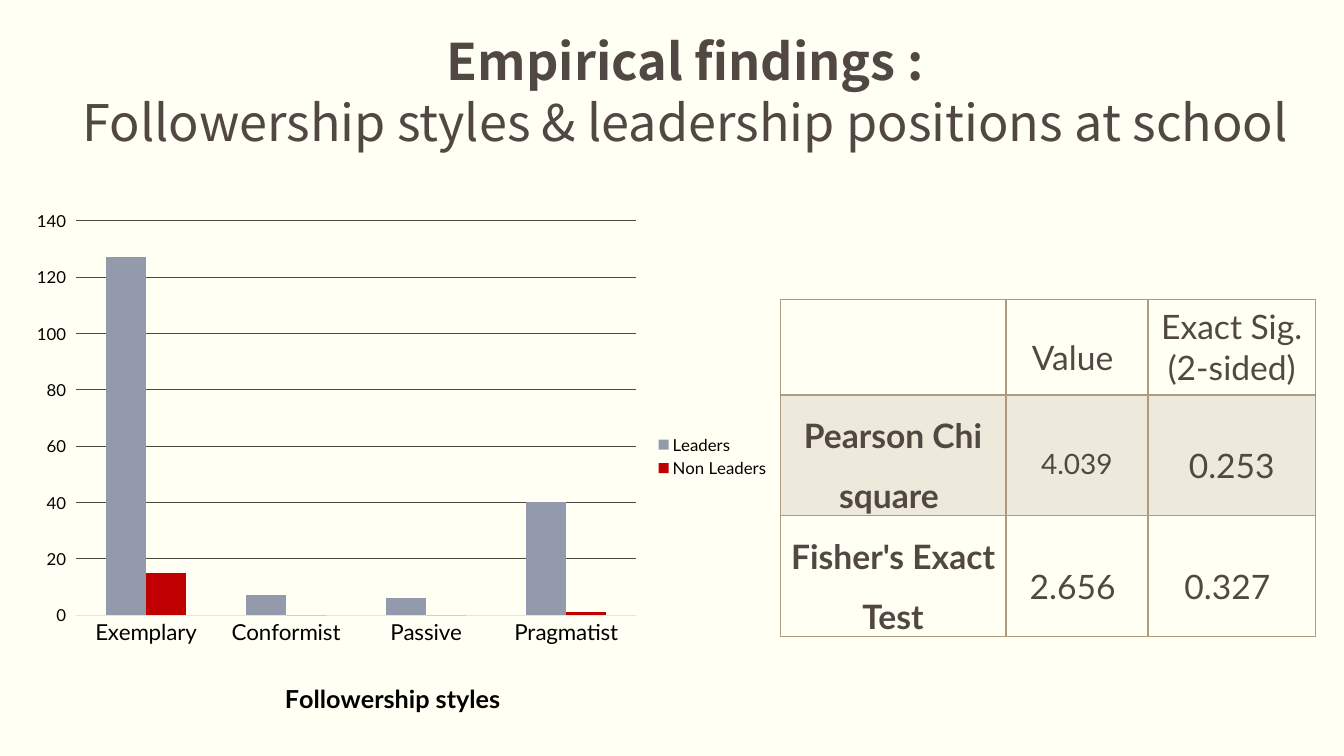
from dataclasses import dataclass
from lxml import etree
from pptx import Presentation
from pptx import util as u
from pptx.chart import data as chart_data
from pptx.dml.color import RGBColor
from pptx.enum import chart as charts, text
from pptx.oxml import ns

BACKGROUND = RGBColor(0xFF, 0xFF, 0xF3)
BROWN = RGBColor(0x51, 0x48, 0x43)
TAN = RGBColor(0xAE, 0x9A, 0x7E)
PALE = RGBColor(0xE6, 0xE3, 0xE1)
GREY_BLUE = RGBColor(0x92, 0x9A, 0xAB)
RED = RGBColor(0xC0, 0x00, 0x00)
BLACK = RGBColor(0, 0, 0)
BODY_FONT = "Lato"
TITLE_FONT = "Noto Sans CJK KR"


@dataclass
class Series:
    name: str
    values: tuple[int, ...]
    color: RGBColor


@dataclass
class Entry:
    words: str
    size: int = 24
    bold: bool = False
    spacing: float = 1.5
    anchor: text.MSO_ANCHOR = text.MSO_ANCHOR.MIDDLE


TOP = text.MSO_ANCHOR.TOP
CATEGORIES = ("Exemplary", "Conformist", "Passive", "Pragmatist")
SERIES = (
    Series("Leaders", (127, 7, 6, 40), GREY_BLUE),
    Series("Non Leaders", (15, 0, 0, 1), RED),
)
TABLE_ROWS = (
    (Entry(""), Entry("Value "), Entry("Exact Sig. (2-sided)", spacing=1.0)),
    (Entry("Pearson Chi square ", bold=True, anchor=TOP), Entry("4.039", size=20), Entry("0.253")),
    (Entry("Fisher's Exact Test", bold=True, anchor=TOP), Entry("2.656 "), Entry("0.327 ")),
)
COLUMN_WIDTHS = (5.69, 3.58, 4.22)
ROW_HEIGHTS = (2.41, 2.95, 2.95)


def format_font(font, size: float, color: RGBColor, name: str = BODY_FONT, bold: bool = False) -> None:
    font.size, font.name, font.bold = u.Pt(size), name, bold
    font.color.rgb = color


def write(paragraph, words: str, *, size: float, color: RGBColor = BROWN, name: str = BODY_FONT,
          bold: bool = False, spacing=None) -> None:
    paragraph.alignment = text.PP_ALIGN.CENTER
    paragraph.line_spacing = spacing
    run = paragraph.add_run()
    run.text = words
    format_font(run.font, size, color, name, bold)


def add_title(slide) -> None:
    shape = slide.shapes.add_textbox(u.Cm(0.91), u.Cm(0.51), u.Cm(32.72), u.Cm(3.33))
    frame = shape.text_frame
    frame.word_wrap = True
    frame.margin_top = u.Cm(0.23)
    lines = (("Empirical findings :", True),
             ("Followership styles & leadership positions at school", False))
    for index, (words, bold) in enumerate(lines):
        paragraph = frame.add_paragraph() if index else frame.paragraphs[0]
        write(paragraph, words, size=36, name=TITLE_FONT, bold=bold, spacing=u.Pt(43.5))


def set_layout(parent, index: int, **settings) -> None:
    """Place a chart part by fractions of the chart's size."""
    for old in parent.findall(ns.qn("c:layout")):
        parent.remove(old)
    layout = etree.Element(ns.qn("c:layout"))
    manual = etree.SubElement(layout, ns.qn("c:manualLayout"))
    for tag, value in settings.items():
        etree.SubElement(manual, ns.qn(f"c:{tag}")).set("val", str(value))
    parent.insert(index, layout)


def add_style_chart(slide) -> None:
    data = chart_data.CategoryChartData()
    data.categories = CATEGORIES
    for series in SERIES:
        data.add_series(series.name, series.values)
    chart = slide.shapes.add_chart(charts.XL_CHART_TYPE.COLUMN_CLUSTERED, u.Cm(0.58), u.Cm(5.05),
                                   u.Cm(19.08), u.Cm(13.13), data).chart
    format_font(chart.font, 10, BROWN)
    chart.has_title = False

    # Columns
    plot = chart.plots[0]
    plot.gap_width, plot.overlap, plot.vary_by_categories = 150, 0, False
    for drawn, series in zip(plot.series, SERIES):
        drawn.format.fill.solid()
        drawn.format.fill.fore_color.rgb = series.color

    # Axes
    category_axis, value_axis = chart.category_axis, chart.value_axis
    category_axis.major_tick_mark = charts.XL_TICK_MARK.NONE
    format_font(category_axis.tick_labels.font, 16, BLACK)
    category_axis.format.line.color.rgb = PALE
    category_axis.format.line.width = u.Pt(0.75)
    axis_title = category_axis.axis_title
    write(axis_title.text_frame.paragraphs[0], "Followership styles", size=18, color=BLACK, bold=True)
    value_axis.minimum_scale, value_axis.maximum_scale, value_axis.major_unit = 0, 140, 20
    value_axis.major_tick_mark = charts.XL_TICK_MARK.OUTSIDE
    format_font(value_axis.tick_labels.font, 12, BLACK)
    value_axis.format.line.fill.background()
    grid = value_axis.major_gridlines.format.line
    grid.color.rgb, grid.width = BROWN, u.Pt(0.75)

    # Legend and placement
    chart.has_legend = True
    chart.legend.position = charts.XL_LEGEND_POSITION.RIGHT
    chart.legend.include_in_layout = False
    format_font(chart.legend.font, 12, BLACK)
    set_layout(plot._element.getparent(), 0, layoutTarget="inner", xMode="edge", yMode="edge",
               x=0.07, y=0.04, w=0.74, h=0.77)
    set_layout(axis_title._element, 1, xMode="edge", yMode="edge", x=0.34, y=0.93)


def set_border(cell, index: int, side: str, width: float) -> None:
    line = etree.Element(ns.qn(f"a:ln{side}"), w=str(u.Pt(width)))
    fill = etree.SubElement(line, ns.qn("a:solidFill"))
    etree.SubElement(fill, ns.qn("a:srgbClr"), val=str(TAN))
    cell._tc.get_or_add_tcPr().insert(index, line)


def format_cell(cell, entry: Entry, row: int) -> None:
    cell.margin_left = cell.margin_right = u.Cm(0.18)
    cell.margin_top = cell.margin_bottom = 0
    cell.vertical_anchor = entry.anchor
    if entry.words:
        write(cell.text_frame.paragraphs[0], entry.words, size=entry.size, bold=entry.bold,
              spacing=entry.spacing)
    if row == 1:
        cell.fill.solid()
        cell.fill.fore_color.rgb = TAN
        color = cell._tc.tcPr.find(".//" + ns.qn("a:srgbClr"))
        etree.SubElement(color, ns.qn("a:alpha"), val="20000")
    else:
        cell.fill.background()
    header_edge = {0: "B", 1: "T"}.get(row)
    for index, side in enumerate("LRTB"):
        set_border(cell, index, side, 2 if side == header_edge else 1)


def add_test_table(slide) -> None:
    table = slide.shapes.add_table(len(ROW_HEIGHTS), len(COLUMN_WIDTHS), u.Cm(19.66), u.Cm(7.54),
                                   u.Cm(sum(COLUMN_WIDTHS)), u.Cm(sum(ROW_HEIGHTS))).table
    table.first_row = table.horz_banding = False
    for column, width in zip(table.columns, COLUMN_WIDTHS):
        column.width = u.Cm(width)
    for row, (height, entries) in enumerate(zip(ROW_HEIGHTS, TABLE_ROWS)):
        table.rows[row].height = u.Cm(height)
        for column, entry in enumerate(entries):
            format_cell(table.cell(row, column), entry, row)


def main() -> None:
    presentation = Presentation()
    presentation.slide_width, presentation.slide_height = u.Cm(33.87), u.Cm(19.05)
    slide = presentation.slides.add_slide(presentation.slide_layouts[6])
    slide.background.fill.solid()
    slide.background.fill.fore_color.rgb = BACKGROUND
    add_title(slide)
    add_style_chart(slide)
    add_test_table(slide)
    presentation.save("out.pptx")


if __name__ == "__main__":
    main()
